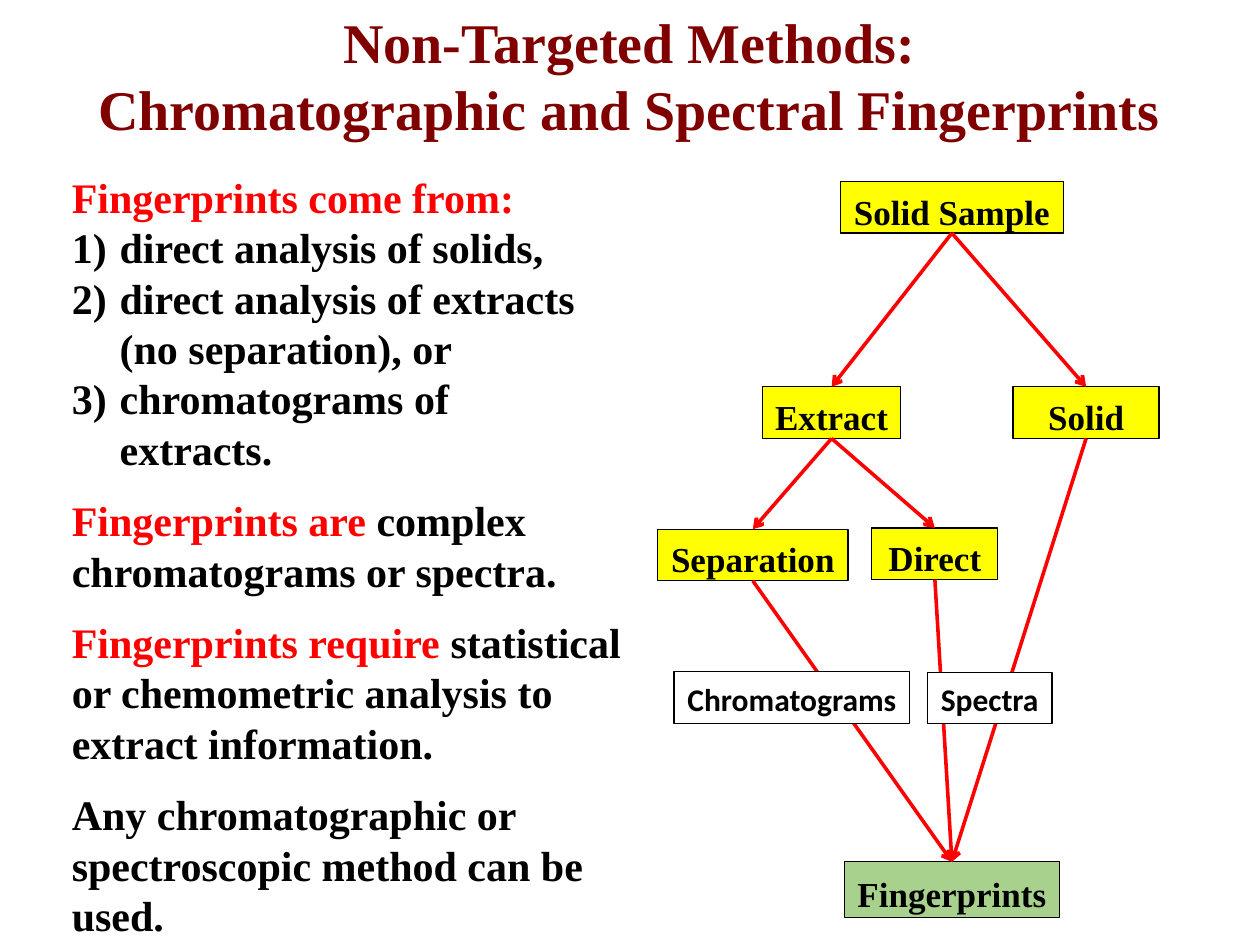
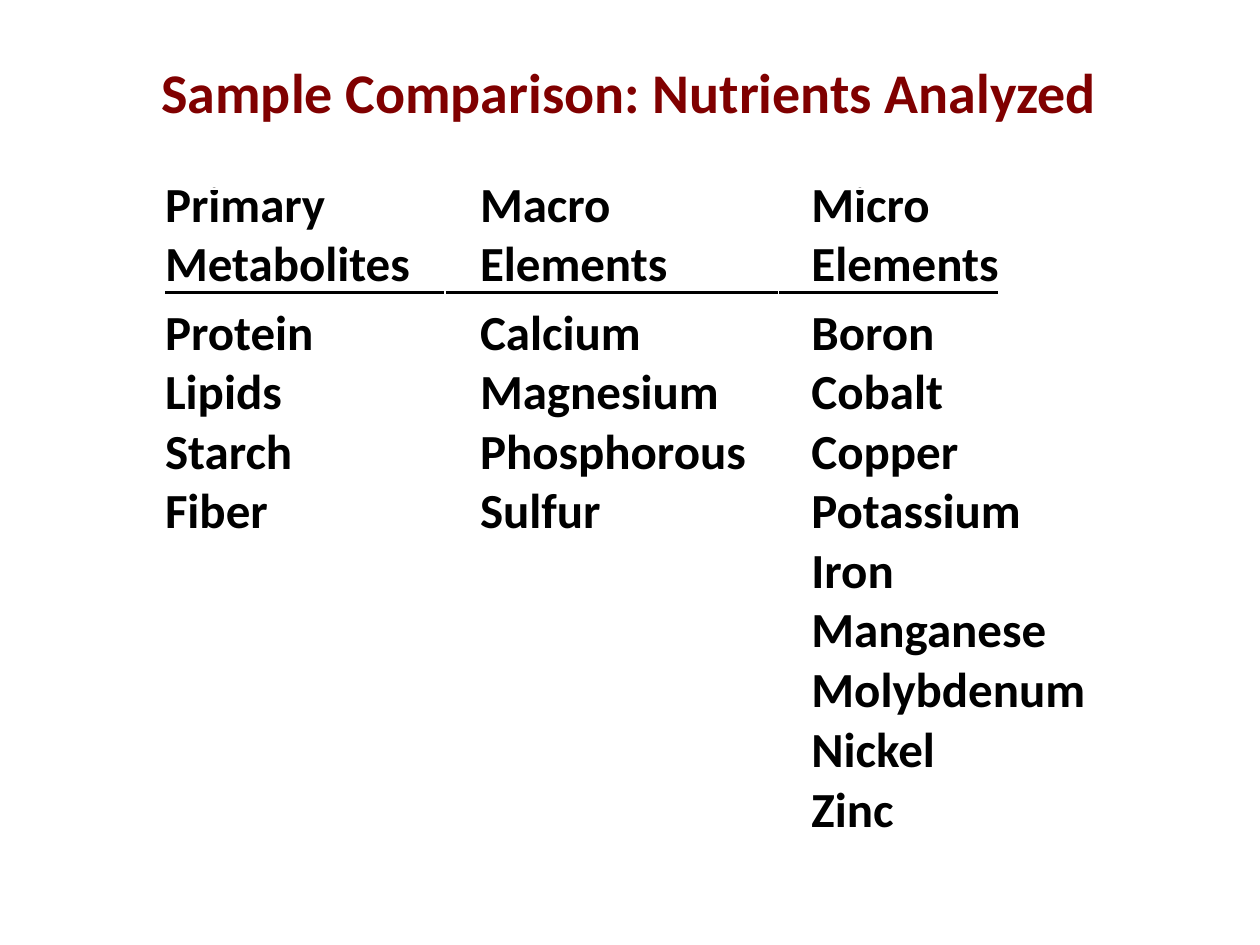
"""Build two slides on chemical fingerprints and the nutrients analyzed."""
from lxml import etree
from pptx import Presentation
from pptx.dml.color import RGBColor
from pptx.enum.shapes import MSO_CONNECTOR as Link, MSO_SHAPE as Shape
from pptx.enum.text import MSO_ANCHOR as Anchor, PP_ALIGN as Align
from pptx.oxml.ns import qn
from pptx.util import Inches, Pt

SERIF, SANS = "Times New Roman", "Calibri"
MAROON, RED, BLACK = "800000", "FF0000", "000000"
YELLOW, GREEN, WHITE = "FFFF00", "A9D18E", "FFFFFF"

HEADS = [
    ("Non-Targeted Methods:\vChromatographic and Spectral Fingerprints", SERIF, 0.06, 1.2),
    ("Sample Comparison: Nutrients Analyzed", SANS, 0.46, 0.56),
]

# red lead, black rest, numbered
NOTES = [
    ("Fingerprints come from:", "", False),
    ("", "direct analysis of solids,", True),
    ("", "direct analysis of extracts (no separation), or", True),
    ("", "chromatograms of\vextracts.", True),
    ("Fingerprints are ", "complex chromatograms or spectra.", False),
    ("Fingerprints require ", "statistical or chemometric analysis to extract information.", False),
    ("", "Any chromatographic or spectroscopic method can be used.", False),
]

NODES = {
    "Solid Sample": (6.67, 1.44, 1.77, 0.41, YELLOW),
    "Extract": (6.05, 3.07, 1.1, 0.41, YELLOW),
    "Solid": (8.04, 3.07, 1.16, 0.41, YELLOW),
    "Separation": (5.22, 4.2, 1.51, 0.41, YELLOW),
    "Direct": (6.92, 4.19, 1, 0.41, YELLOW),
    "Fingerprints": (6.7, 6.84, 1.71, 0.44, GREEN),
}
EDGES = [
    ("Solid Sample", "Extract"), ("Solid Sample", "Solid"),
    ("Extract", "Separation"), ("Extract", "Direct"),
    ("Solid", "Fingerprints"), ("Separation", "Fingerprints"), ("Direct", "Fingerprints"),
]
LABELS = {
    "Chromatograms": (5.35, 5.33, 1.87, 0.41, WHITE),
    "Spectra": (7.36, 5.34, 0.99, 0.4, WHITE),
}

ROWS = [
    ("Primary", "Macro", "Micro"),
    ("Metabolites", "Elements", "Elements"),
    ("Protein", "Calcium", "Boron"),
    ("Lipids", "Magnesium", "Cobalt"),
    ("Starch", "Phosphorous", "Copper"),
    ("Fiber", "Sulfur", "Potassium\nIron\nManganese\nMolybdenum\nNickel\nZinc"),
]
HIGHS = [0.43, 0.51, 0.51, 0.47, 0.47, 2.76]
LEADS = [26.6, 29.4, 32.4, 29.4, 29.4, 29.4]
COLS = [(2.26, 0.04), (2.65, 0.28), (2.46, 0.26)]


def rgb(code):
    return RGBColor.from_string(code)


def style(font, name, size, color=BLACK):
    font.name, font.size, font.bold = name, Pt(size), True
    font.color.rgb = rgb(color)


def pad(item, left=0, top=0):
    item.margin_left, item.margin_top = Inches(left), Inches(top)
    item.margin_right = item.margin_bottom = 0


def add_box(slide, *area):
    frame = slide.shapes.add_textbox(*map(Inches, area)).text_frame
    frame.word_wrap = True
    pad(frame)
    return frame


def add_head(slide, text, face, top, high):
    para = add_box(slide, 0.44, top, 9.11, high).paragraphs[0]
    para.text, para.alignment = text, Align.CENTER
    style(para.font, face, 32, MAROON)


def add_node(slide, text, spot, face, size, drop):
    *area, fill = spot
    node = slide.shapes.add_shape(Shape.RECTANGLE, *map(Inches, area))
    node.shadow.inherit = False
    node.fill.solid()
    node.fill.fore_color.rgb = rgb(fill)
    node.line.color.rgb, node.line.width = rgb(BLACK), Pt(0.72)
    frame = node.text_frame
    frame.word_wrap, frame.vertical_anchor = False, Anchor.MIDDLE
    pad(frame, top=drop)
    para = frame.paragraphs[0]
    para.text, para.alignment = text, Align.CENTER
    style(para.font, face, size)
    return node


def add_line(slide, color, width, ends=(0, 0, 0, 0)):
    line = slide.shapes.add_connector(Link.STRAIGHT, *map(Inches, ends))
    line.line.color.rgb, line.line.width = rgb(color), Pt(width)
    etree.SubElement(line._element.spPr, qn("a:effectLst"))
    return line


def add_arrow(slide, start, end):
    line = add_line(slide, RED, 2.04)
    line.begin_connect(start, 2)
    line.end_connect(end, 0)
    etree.SubElement(line.line._get_or_add_ln(), qn("a:tailEnd"), type="arrow")


def add_notes(slide):
    frame = add_box(slide, 0.57, 1.36, 4.5, 5.73)
    for i, (lead, rest, listed) in enumerate(NOTES):
        para = frame.add_paragraph() if i else frame.paragraphs[0]
        if listed:
            props = para._p.get_or_add_pPr()
            props.set("marL", str(Inches(0.38)))
            props.set("indent", str(-Inches(0.38)))
            etree.SubElement(props, qn("a:buAutoNum"), type="arabicParenR")
        elif i:
            para.space_before = Pt(12)
        style(para.font, SERIF, 24)
        if lead:
            run = para.add_run()
            run.text = lead
            run.font.color.rgb = rgb(RED)
        for j, part in enumerate(rest.split("\v") if rest else []):
            if j:
                para.add_line_break()
            para.add_run().text = part


def add_flow(slide):
    nodes = {text: add_node(slide, text, spot, SERIF, 20, 0.06) for text, spot in NODES.items()}
    for start, end in EDGES:
        add_arrow(slide, nodes[start], nodes[end])
    for text, spot in LABELS.items():
        add_node(slide, text, spot, SANS, 18, 0.02)


def add_grid(slide):
    area = (1.27, 1.5, sum(wide for wide, _ in COLS), sum(HIGHS))
    table = slide.shapes.add_table(len(ROWS), len(COLS), *map(Inches, area)).table
    table.first_row = table.horz_banding = False
    for col, (wide, _) in zip(table.columns, COLS):
        col.width = Inches(wide)
    for row, high, lead, texts in zip(table.rows, HIGHS, LEADS, ROWS):
        row.height = Inches(high)
        for cell, (_, left), text in zip(row.cells, COLS, texts):
            cell.fill.background()
            pad(cell, left)
            cell.text_frame.text = text
            for para in cell.text_frame.paragraphs:
                style(para.font, SANS, 28)
            cell.text_frame.paragraphs[0].line_spacing = Pt(lead)


def main():
    deck = Presentation()
    deck.slide_width, deck.slide_height = Inches(10), Inches(7.5)
    first, second = [deck.slides.add_slide(deck.slide_layouts[6]) for _ in HEADS]
    for slide, head in zip((first, second), HEADS):
        add_head(slide, *head)
    add_notes(first)
    add_flow(first)
    add_line(second, BLACK, 1.8, (1.31, 2.32, 7.92, 2.32))
    add_grid(second)
    deck.save("out.pptx")


if __name__ == "__main__":
    main()
